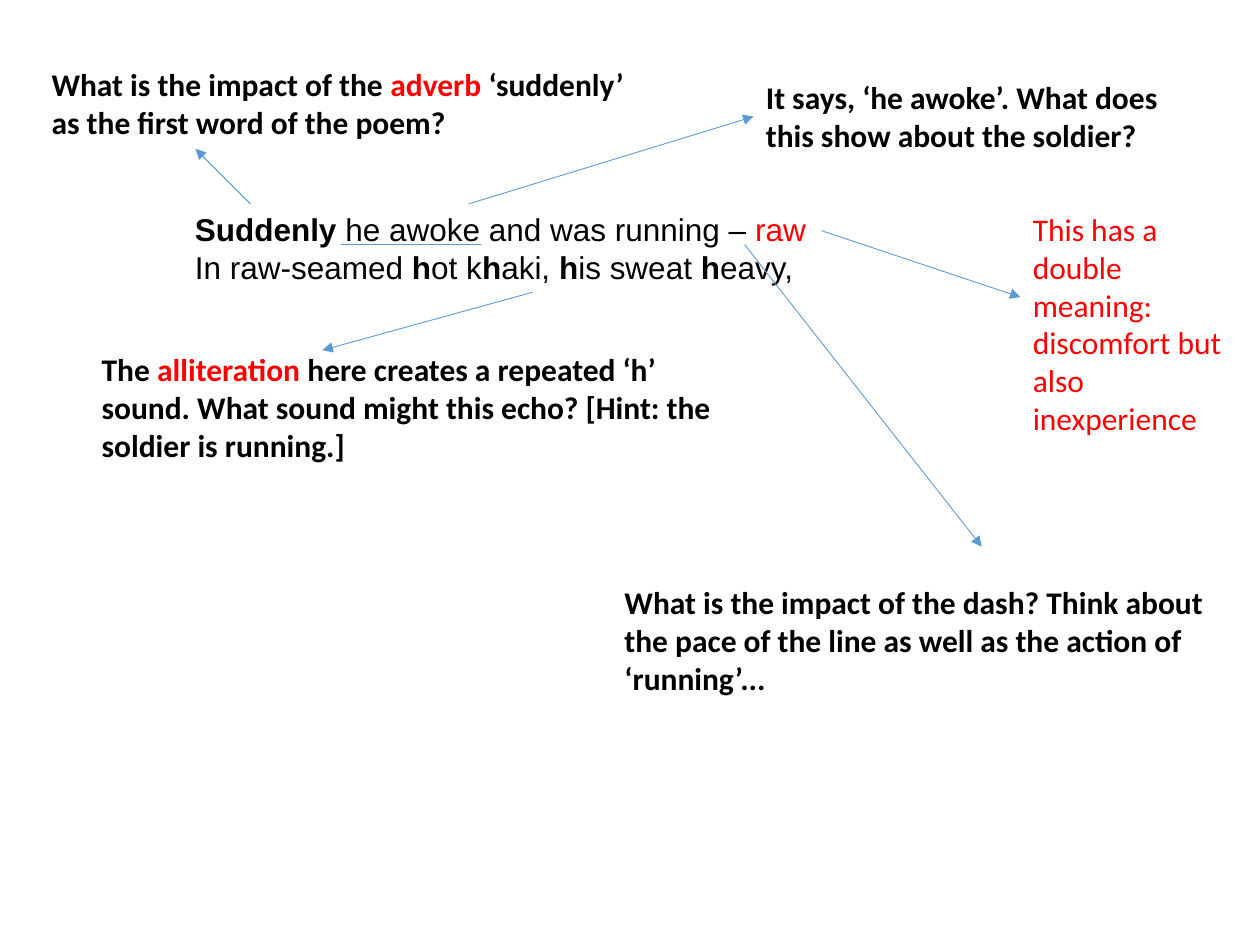
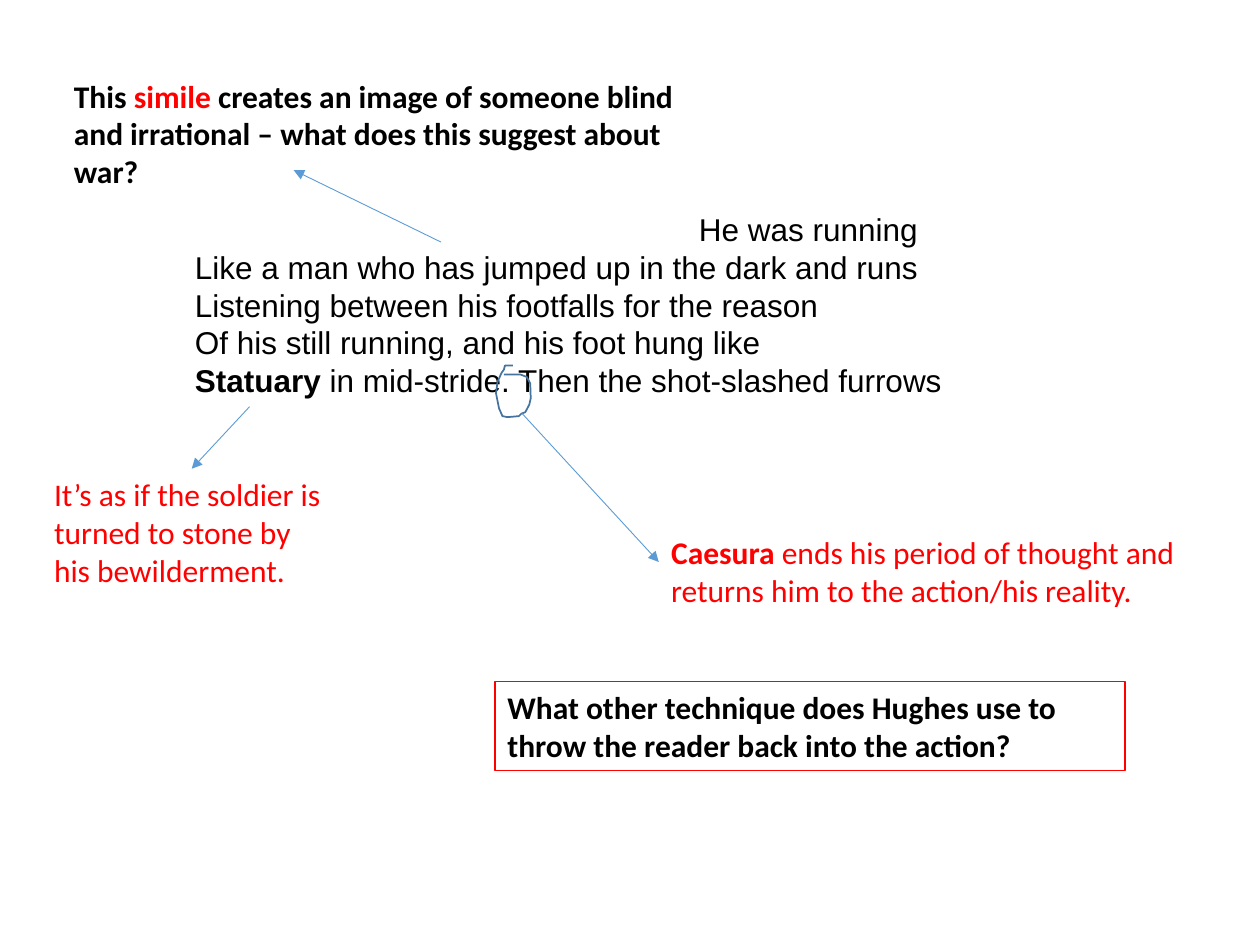
from lxml.etree import SubElement
from pptx import Presentation
from pptx.dml.color import RGBColor
from pptx.enum.shapes import MSO_CONNECTOR
from pptx.enum.text import MSO_ANCHOR, MSO_AUTO_SIZE
from pptx.oxml.ns import qn
from pptx.util import Cm, Pt

BLACK, RED, BLUE, INK = "000000", "FF0000", "5B9BD5", "43739E"
VERSE_FONT, NOTE_FONT = "Arial", "Calibri"
VERSE_LEFT, VERSE_TOP, VERSE_WIDTH = 3.68, 4.11, 16.66
LEFT_SIDE, TOP_SIDE = 1, 0
RING_POINTS = [
    (36, 0), (20, 0), (18, 8), (13, 15), (5, 33), (2, 56), (8, 86), (15, 102), (25, 104),
    (48, 102), (53, 97), (61, 94), (69, 79), (72, 66), (71, 36), (64, 23), (51, 18), (18, 18),
]


def color(code):
    return RGBColor.from_string(code)


def add_span(para, text, font=NOTE_FONT, size=18, bold=False, ink=BLACK):
    span = para.add_run()
    span.text = text
    span.font.name = font
    span.font.size = Pt(size)
    span.font.bold = bold
    span.font.color.rgb = color(ink)


def add_text(page, box, lines, **style):
    shape = page.shapes.add_textbox(*map(Cm, box))
    frame = shape.text_frame
    frame.word_wrap = True
    frame.auto_size = MSO_AUTO_SIZE.SHAPE_TO_FIT_TEXT
    frame.vertical_anchor = MSO_ANCHOR.TOP
    for index, line in enumerate(lines):
        para = frame.add_paragraph() if index else frame.paragraphs[0]
        for text, changes in line:
            add_span(para, text, **{**style, **changes})
    return shape


def add_line(page, start, end, arrow=True):
    line = page.shapes.add_connector(MSO_CONNECTOR.STRAIGHT, *map(Cm, (*start, *end)))
    line.line.color.rgb = color(BLUE)
    line.line.width = Pt(0.5)
    properties = line._element.spPr
    if arrow:
        SubElement(properties.find(qn("a:ln")), qn("a:tailEnd"), type="triangle")
    SubElement(properties, qn("a:effectLst"))
    return line


def from_verse(x, y):
    return VERSE_LEFT + x, VERSE_TOP + y


def add_verse(page, height, lines):
    box = VERSE_LEFT, VERSE_TOP, VERSE_WIDTH, height
    return add_text(page, box, lines, font=VERSE_FONT)


def add_note(page, box, spans, source, tip=(0, 0), side=None, **style):
    note = add_text(page, box, [spans], **style)
    arrow = add_line(page, from_verse(*source), (box[0] + tip[0], box[1] + tip[1]))
    if side is not None:
        arrow.end_connect(note, side)


def add_ring(page, left, top):
    builder = page.shapes.build_freeform(*RING_POINTS[0], scale=Cm(0.01))
    builder.add_line_segments(RING_POINTS[1:], close=False)
    ring = builder.convert_to_shape(Cm(left), Cm(top))
    ring.shadow.inherit = False
    ring.fill.background()
    ring.line.color.rgb = color(INK)
    ring.line.width = Pt(1)


def add_question(page, box, text):
    question = add_text(page, box, [[(text, {})]], bold=True)
    question.line.color.rgb = color(RED)
    question.line.width = Pt(0.75)


def build_awakening(page):
    strong, red = {"bold": True}, {"ink": RED}
    add_verse(page, 1.8, [
        [("Suddenly", strong), (" he awoke and was running – ", {}), ("raw", red)],
        [("In raw-seamed ", {}), ("h", strong), ("ot k", {}), ("h", strong), ("aki, ", {}),
         ("h", strong), ("is sweat ", {}), ("h", strong), ("eavy,", {})],
    ])
    add_line(page, from_verse(3.2, 0.82), from_verse(6.02, 0.82), arrow=False)
    add_note(page, (0.79, 1.19, 12.7, 1.8), [
        ("What is the impact of the ", {}), ("adverb", red),
        (" ‘suddenly’ as the first word of the poem?", {}),
    ], source=(1.37, 0), tip=(3.15, 1.81), bold=True)
    add_note(page, (15.19, 1.45, 8.71, 1.8), [
        ("It says, ‘he awoke’. What does this show about the soldier?", {}),
    ], source=(5.77, 0), side=LEFT_SIDE, bold=True)
    add_note(page, (20.57, 4.11, 4.47, 4.88), [
        ("This has a double meaning: discomfort but also inexperience", {}),
    ], source=(12.88, 0.54), tip=(0, 1.88), ink=RED)
    add_note(page, (1.8, 6.93, 13.39, 2.57), [
        ("The ", {}), ("alliteration ", red),
        ("here creates a repeated ‘h’ sound. What sound might this echo? "
         "[Hint: the soldier is running.]", {}),
    ], source=(7.06, 1.78), tip=(4.7, 0.13), bold=True)
    add_note(page, (12.34, 11.63, 12.7, 2.57), [
        ("What is the impact of the dash? Think about the pace of the line "
         "as well as the action of ‘running’...", {}),
    ], source=(11.33, 0.82), tip=(7.45, -0.61), bold=True)


def build_running(page):
    verse = add_verse(page, 4.11, [
        [("He was running", {})],
        [("Like a man who has jumped up in the dark and runs", {})],
        [("Listening between his footfalls for the reason", {})],
        [("Of his still running, and his foot hung like", {})],
        [("Statuary", {"bold": True}), (" in mid-stride. Then the shot-slashed furrows", {})],
    ])
    first_line = verse.text_frame.paragraphs[0]
    first_line._p.get_or_add_pPr().set("marL", str(Cm(10.16)))
    add_note(page, (1.24, 1.42, 13.51, 2.57), [
        ("This ", {}), ("simile", {"ink": RED}),
        (" creates an image of someone blind and irrational – "
         "what does this suggest about war?", {}),
    ], source=(5.21, 0.77), tip=(4.68, 2.01), bold=True)
    add_note(page, (0.84, 9.45, 6.05, 2.57), [
        ("It’s as if the soldier is turned to stone by his bewilderment.", {}),
    ], source=(1.35, 4.09), side=TOP_SIDE, ink=RED)
    add_ring(page, *from_verse(6.3, 3.26))
    add_note(page, (13.28, 10.62, 11.94, 1.8), [
        ("Caesura", {"bold": True}),
        (" ends his period of thought and returns him to the action/his reality.", {}),
    ], source=(6.84, 4.22), tip=(0, 0.71), ink=RED)
    add_question(page, (9.98, 13.74, 12.7, 1.8),
                 "What other technique does Hughes use to throw the reader back into the action?")


def main():
    deck = Presentation()
    deck.slide_width, deck.slide_height = Cm(25.4), Cm(19.05)
    for build in (build_awakening, build_running):
        build(deck.slides.add_slide(deck.slide_layouts[6]))
    deck.save("out.pptx")


if __name__ == "__main__":
    main()
